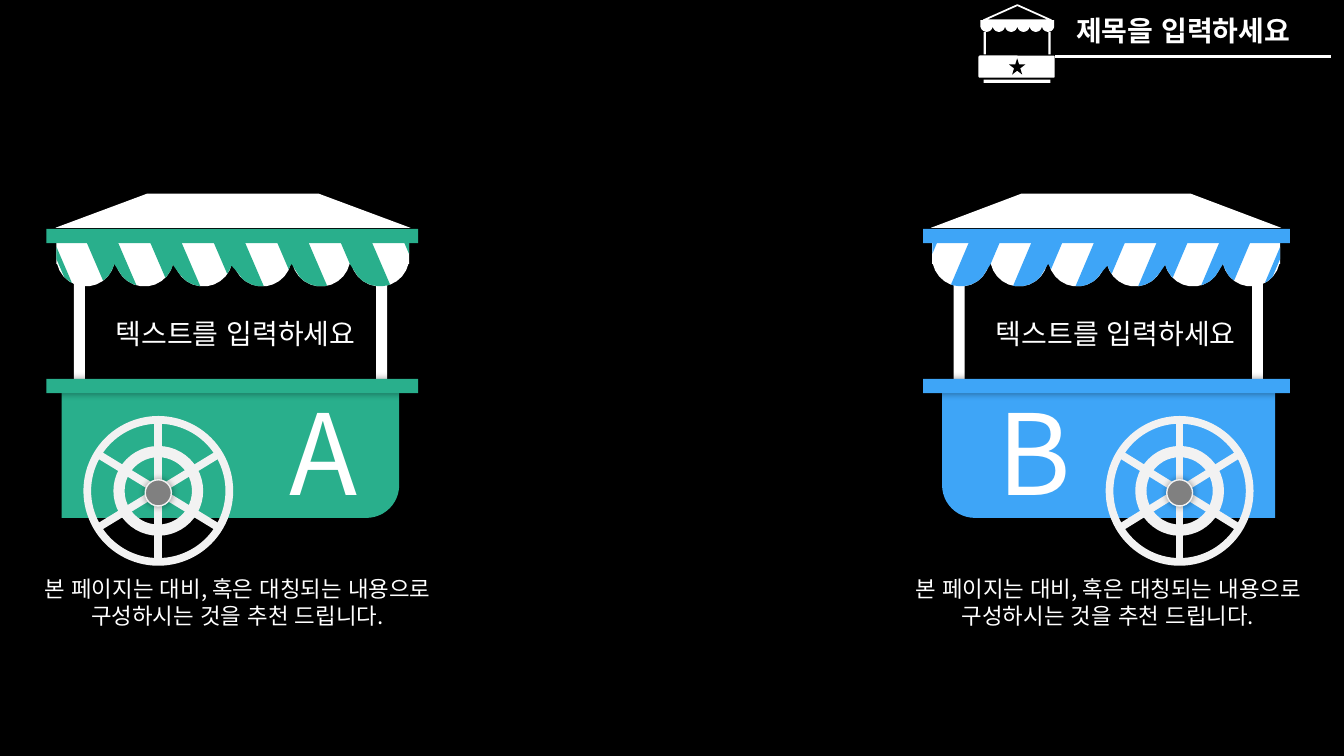
from math import cos, radians, sin
from lxml import etree
from pptx import Presentation
from pptx.dml.color import RGBColor
from pptx.enum.lang import MSO_LANGUAGE_ID
from pptx.enum.shapes import MSO_CONNECTOR, MSO_SHAPE
from pptx.enum.text import MSO_ANCHOR, PP_ALIGN
from pptx.oxml import parse_xml
from pptx.oxml.ns import qn
from pptx.util import Cm, Pt

THEME = dict(font="Noto Sans CJK KR", black="000000", white="FFFFFF",
             green="29AF8C", blue="3EA5F7", wheel="F2F2F2", hub="808080",
             title=20, sign=20, caption=16, letter=80)
SHADOW = ('<a:outerShdw xmlns:a="http://schemas.openxmlformats.org/drawingml/2006/main" '
          'blurRad="63500" dist="0" algn="ctr" rotWithShape="0"><a:srgbClr val="000000">'
          '<a:alpha val="40000"/></a:srgbClr></a:outerShdw>')

prs = Presentation()
prs.slide_width, prs.slide_height = Cm(33.87), Cm(19.05)
s = prs.slides.add_slide(prs.slide_layouts[6])
s.background.fill.solid()
s.background.fill.fore_color.rgb = RGBColor.from_string(THEME["black"])


def draw(kind, geo, fill=None, line=None, width=0, shadow=False, edge=0, k=1):
    """Draw a box, a line or a list of outlines; x runs from edge, scaled by k."""
    if kind == "free":
        fb = None
        for outline in geo:
            pts = [(Cm(edge + k * x), Cm(y)) for x, y in outline]
            if fb is None:
                fb = s.shapes.build_freeform(*pts[0], scale=1.0)
            else:
                fb.move_to(*pts[0])
            fb.add_line_segments(pts[1:], close=True)
        sp = fb.convert_to_shape()
    elif kind == "line":
        x1, y1, x2, y2 = geo
        sp = s.shapes.add_connector(MSO_CONNECTOR.STRAIGHT, Cm(edge + k * x1), Cm(y1),
                                    Cm(edge + k * x2), Cm(y2))
    else:
        x, y, w, h = geo
        left = min(edge + k * x, edge + k * (x + w))
        sp = s.shapes.add_shape(kind, Cm(left), Cm(y), Cm(w * abs(k)), Cm(h))
    if kind == "line":
        etree.SubElement(sp.element.spPr, qn("a:effectLst"))
    else:
        sp.shadow.inherit = False
        if fill:
            sp.fill.solid()
            sp.fill.fore_color.rgb = RGBColor.from_string(THEME[fill])
        else:
            sp.fill.background()
    if line:
        sp.line.color.rgb = RGBColor.from_string(THEME[line])
        sp.line.width = Pt(width)
    else:
        sp.line.fill.background()
    if shadow:
        sp.element.spPr.find(qn("a:effectLst")).append(parse_xml(SHADOW))
    return sp


def write(x, y, w, h, text, role, align=PP_ALIGN.CENTER, wrap=True, bold=False):
    tf = s.shapes.add_textbox(Cm(x), Cm(y), Cm(w), Cm(h)).text_frame
    tf.word_wrap = wrap
    tf.vertical_anchor = MSO_ANCHOR.MIDDLE if role == "title" else MSO_ANCHOR.TOP
    p = tf.paragraphs[0]
    p.alignment = align
    r = p.add_run()
    r.text = text
    r.font.name, r.font.size, r.font.bold = THEME["font"], Pt(THEME[role]), bold
    r.font.language_id = MSO_LANGUAGE_ID.KOREAN
    r.font.color.rgb = RGBColor.from_string(THEME["white"])
    ea = etree.SubElement(r.font._element, qn("a:ea"))
    ea.set("typeface", THEME["font"])


# Awning outline: straight top, hem of six round scallops
LEFT, RIGHT, TOP, VALLEY = 0.25, 9.14, 5.82, 6.65
RADIUS, ARC_Y = 0.74, 6.48
centres = [0.99 + 1.483 * i for i in range(6)]
awning = [(LEFT, VALLEY), (LEFT, TOP), (RIGHT, TOP), (RIGHT, VALLEY)]
for c in reversed(centres):
    for angle in range(13, 168, 14):
        a = radians(angle)
        awning.append((c + RADIUS * cos(a), ARC_Y + RADIUS * sin(a)))

# Slanted stripes, cut to the awning
stripes = []
for i in range(-1, 6):
    upper, lower = [], []
    for j in range(13):
        start = 0.89 + 1.6 * i + 0.79 * j / 12
        inside = []
        for d in range(143):
            x, y = start + 0.43 * d / 100, TOP + d / 100
            in_scallop = any((x - c) ** 2 + (y - ARC_Y) ** 2 <= RADIUS ** 2 for c in centres)
            if LEFT <= x <= RIGHT and (y <= VALLEY or in_scallop):
                inside.append((x, y))
        if inside:
            upper.append(inside[0])
            lower.append(inside[-1])
    stripes.append([upper[0], upper[-1]] + lower[::-1])

# Captions and title
for x in (0.36, 22.3):
    write(x, 14.38, 11.25, 1.63,
          "본 페이지는 대비, 혹은 대칭되는 내용으로 구성하시는 것을 추천 드립니다.", "caption")
write(26.87, 0.18, 6.68, 1.19, "제목을 입력하세요", "title", PP_ALIGN.LEFT, bold=True)

# Small stall beside the title
ZOOM = 0.209
draw(MSO_SHAPE.ISOSCELES_TRIANGLE, (24.79, 0.13, 1.7, 0.38), line="white", width=1.25)
draw("free", [[(24.71 + (x - LEFT) * ZOOM, 0.51 + (y - TOP) * ZOOM) for x, y in awning]], "white")
for box in ((24.79, 0.81, 0.06, 0.56), (26.42, 0.81, 0.06, 0.56), (24.79, 2.01, 1.68, 0.08)):
    draw(MSO_SHAPE.RECTANGLE, box, "white")
sp = draw(MSO_SHAPE.ROUNDED_RECTANGLE, (24.66, 1.4, 1.92, 0.56), "white")
sp.adjustments[0] = 0.06
draw(MSO_SHAPE.STAR_5_POINT, (25.43, 1.47, 0.41, 0.41), "black")
draw("line", (26.59, 1.42, 33.53, 1.42), line="white", width=2.25)

# Two facing carts: edge, scale, colour, sign box, letter box
HUB_X, HUB_Y = 2.82, 12.37
carts = [(1.17, 1, "green", (2.08, 7.72), "A", (7.04, 2.24)),
         (32.51, -0.9865, "blue", (24.36, 7.52), "B", (24.89, 2.03))]
for edge, k, colour, (sign_x, sign_w), letter, (letter_x, letter_w) in carts:
    place = dict(edge=edge, k=k)
    write(sign_x, 7.85, sign_w, 1.19, "텍스트를 입력하세요", "sign", wrap=False)

    # Poles, body and counter
    for x in (0.69, 8.31):
        draw(MSO_SHAPE.RECTANGLE, (x, 7.11, 0.28, 2.51), "white", **place)
    sp = draw(MSO_SHAPE.SNIP_ROUND_RECTANGLE, (0.38, 9.7, 8.51, 3.35), colour, **place)
    sp.adjustments[0], sp.adjustments[1] = 0.247, 0
    sp.rotation = 180
    if k < 0:
        sp.element.spPr.xfrm.set("flipH", "1")
    draw(MSO_SHAPE.RECTANGLE, (0, 9.55, 9.37, 0.36), colour, shadow=True, **place)

    # Roof, awning and beam
    draw("free", [[(2.54, 4.88), (6.86, 4.88), (9.17, 5.74), (0.23, 5.74)]], "white", **place)
    draw("free", [awning], "white", **place)
    draw("free", stripes, colour, **place)
    draw(MSO_SHAPE.RECTANGLE, (0, 5.77, 9.37, 0.36), colour, **place)

    # Wheel
    for radius, width in ((1.79, 5.5), (0.99, 8)):
        draw(MSO_SHAPE.OVAL, (HUB_X - radius, HUB_Y - radius, 2 * radius, 2 * radius),
             line="wheel", width=width, **place)
    for dx, dy in ((0, 1.8), (1.51, -0.92), (1.51, 0.92)):
        draw("line", (HUB_X - dx, HUB_Y - dy, HUB_X + dx, HUB_Y + dy),
             line="wheel", width=5.5, **place)
    draw(MSO_SHAPE.OVAL, (HUB_X - 0.33, 12.09, 0.66, 0.66), "hub", "wheel", 1, True, **place)

    write(letter_x, 9.55, letter_w, 3.68, letter, "letter", PP_ALIGN.LEFT, wrap=False)

prs.save("out.pptx")
